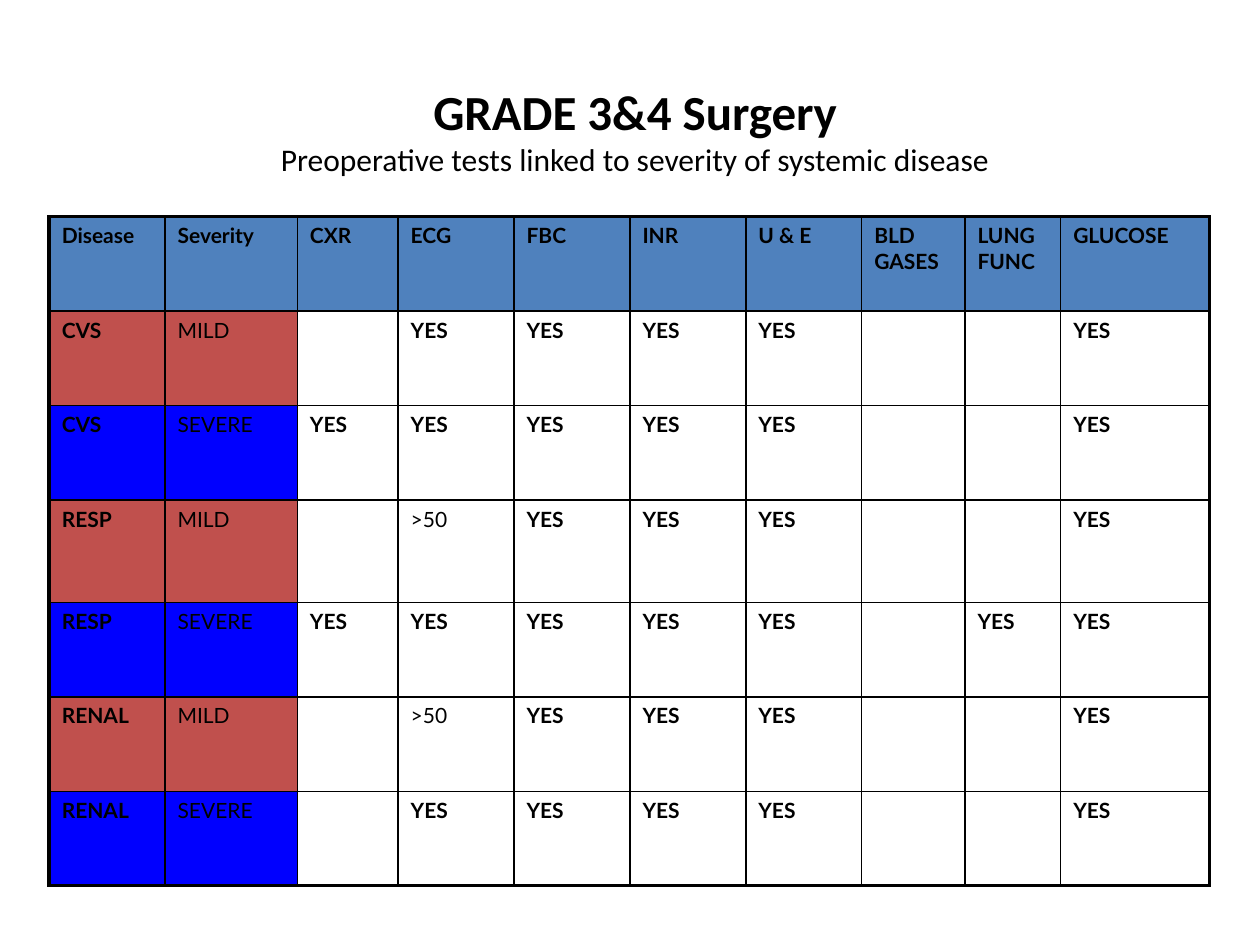
from lxml import etree
from pptx import Presentation
from pptx.dml.color import RGBColor
from pptx.enum import text
from pptx.oxml.ns import qn
from pptx.util import Inches, Pt

BLACK = RGBColor(0x00, 0x00, 0x00)
WHITE = RGBColor(0xFF, 0xFF, 0xFF)
HEADER_BLUE = RGBColor(0x4F, 0x81, 0xBD)
SEVERITY_FILLS = {"MILD": RGBColor(0xC0, 0x50, 0x4D),
                  "SEVERE": RGBColor(0x00, 0x00, 0xFF)}

COLUMN_WIDTHS = [0.92, 1.05, 0.8, 0.92, 0.92, 0.92, 0.92, 0.82, 0.76, 1.18]
ROW_HEIGHTS = [0.75, 0.75, 0.75, 0.81, 0.75, 0.75, 0.75]
HEADERS = ["Disease", "Severity", "CXR", "ECG", "FBC", "INR", "U & E",
           "BLD GASES", "LUNG FUNC", "GLUCOSE"]
# Disease, severity, CXR, ECG, lung function; the other tests never vary
DISEASES = [
    ("CVS", "MILD", "", "YES", ""),
    ("CVS", "SEVERE", "YES", "YES", ""),
    ("RESP", "MILD", "", ">50", ""),
    ("RESP", "SEVERE", "YES", "YES", "YES"),
    ("RENAL", "MILD", "", ">50", ""),
    ("RENAL", "SEVERE", "", "YES", ""),
]


def format_run(r, font, size, bold):
    r.font.name = font
    r.font.size = Pt(size)
    r.font.bold = bold
    r.font.color.rgb = BLACK


def add_title(slide):
    box = slide.shapes.add_textbox(Inches(0.78), Inches(0.23),
                                   Inches(8.52), Inches(1.6))
    tf = box.text_frame
    tf.word_wrap = True
    tf.vertical_anchor = text.MSO_ANCHOR.MIDDLE
    p = tf.paragraphs[0]
    p.alignment = text.PP_ALIGN.CENTER
    p.text = ("GRADE 3&4 Surgery\v"
              "Preoperative tests linked to severity of systemic disease")
    heading, subtitle = p.runs
    format_run(heading, "Calibri", 28, True)
    format_run(subtitle, "Calibri", 18, False)


def set_borders(cell, widths):
    """Draw black borders; widths maps L, R, T and B to points."""
    tc_pr = cell._tc.get_or_add_tcPr()
    for index, side in enumerate("LRTB"):
        ln = etree.Element(qn("a:ln" + side), w=str(Pt(widths[side])))
        fill = etree.SubElement(ln, qn("a:solidFill"))
        etree.SubElement(fill, qn("a:srgbClr"), val=str(BLACK))
        tc_pr.insert(index, ln)


def set_space_before(p, percent):
    spacing = etree.SubElement(p._p.get_or_add_pPr(), qn("a:spcBef"))
    etree.SubElement(spacing, qn("a:spcPct"), val=str(percent * 1000))


def fill_cell(cell, value, fill, bold):
    cell.fill.solid()
    cell.fill.fore_color.rgb = fill
    if value:
        p = cell.text_frame.paragraphs[0]
        p.text = value
        set_space_before(p, 20)
        format_run(p.runs[0], "Lato", 12, bold)


def table_rows():
    rows = [HEADERS]
    for disease, severity, cxr, ecg, lung in DISEASES:
        rows.append([disease, severity, cxr, ecg, "YES", "YES", "YES",
                     "", lung, "YES"])
    return rows


def add_tests_table(slide):
    rows = table_rows()
    last_row, last_col = len(rows) - 1, len(HEADERS) - 1
    table = slide.shapes.add_table(
        len(rows), len(HEADERS), Inches(0.39), Inches(1.72),
        Inches(sum(COLUMN_WIDTHS)), Inches(sum(ROW_HEIGHTS))).table
    for column, width in zip(table.columns, COLUMN_WIDTHS):
        column.width = Inches(width)
    for row, height in zip(table.rows, ROW_HEIGHTS):
        row.height = Inches(height)

    for i, values in enumerate(rows):
        for j, value in enumerate(values):
            if i == 0:
                fill = HEADER_BLUE
            else:
                fill = SEVERITY_FILLS[values[1]] if j < 2 else WHITE
            bold = value not in ("MILD", "SEVERE", ">50")
            cell = table.cell(i, j)
            fill_cell(cell, value, fill, bold)
            outer = {"L": j == 0, "R": j == last_col,
                     "T": i == 0, "B": i == last_row}
            set_borders(cell, {side: 2.25 if edge else 1
                               for side, edge in outer.items()})


def main():
    prs = Presentation()
    prs.slide_width = Inches(10)
    prs.slide_height = Inches(7.5)
    slide = prs.slides.add_slide(prs.slide_layouts[6])
    add_tests_table(slide)
    add_title(slide)
    prs.save("out.pptx")


if __name__ == "__main__":
    main()
